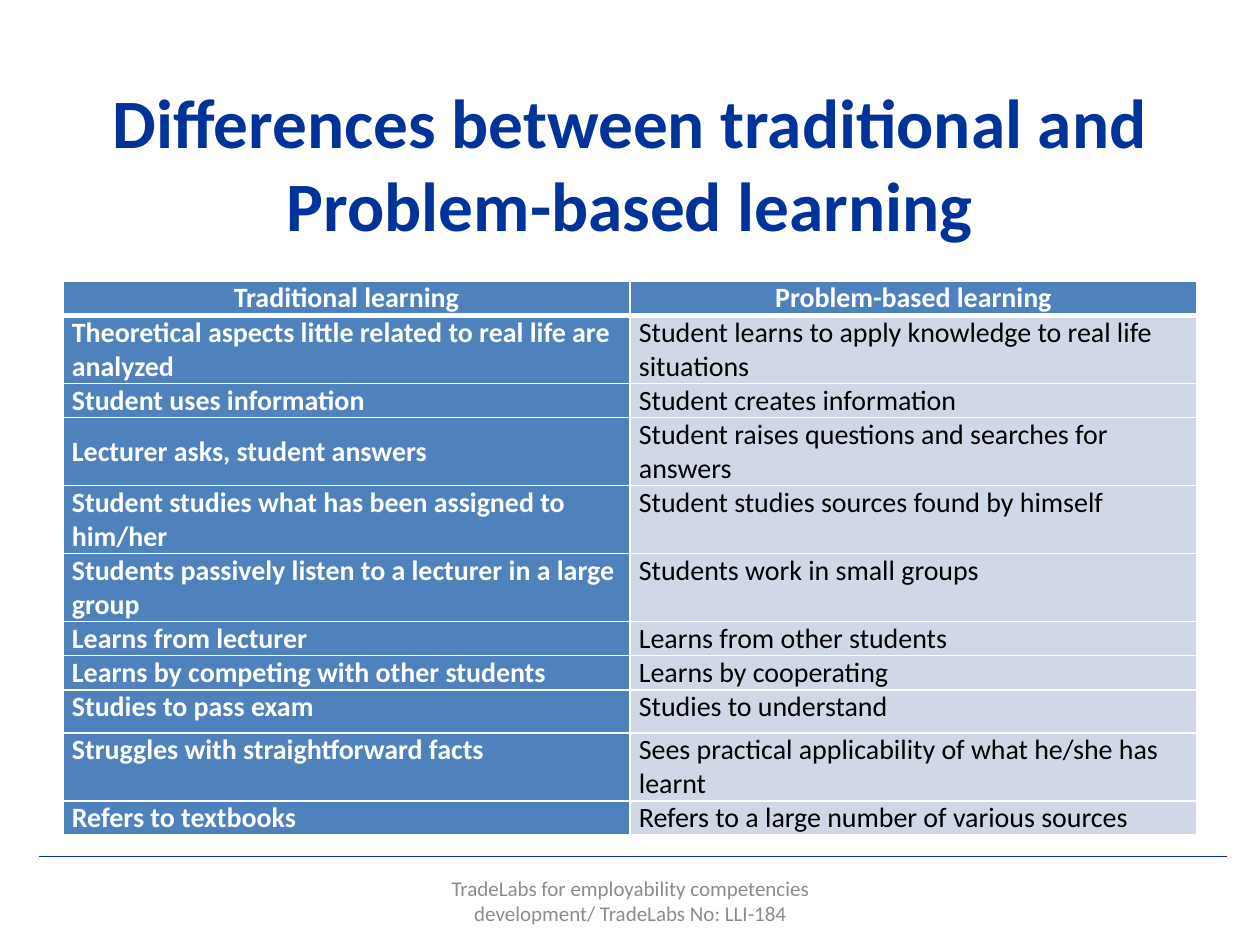
from dataclasses import dataclass

from lxml.etree import SubElement
from pptx import Presentation
from pptx.dml.color import RGBColor
from pptx.enum.shapes import MSO_CONNECTOR
from pptx.enum.text import MSO_ANCHOR, PP_ALIGN
from pptx.oxml.ns import qn
from pptx.util import Cm, Pt


@dataclass(frozen=True)
class Theme:
    font: str = "Calibri"
    navy: str = "003399"
    header: str = "4F81BD"
    body: str = "D0D8E8"
    white: str = "FFFFFF"
    black: str = "000000"
    grey: str = "8C8C8C"
    title_size: float = 39.6
    table_size: float = 16
    footer_size: float = 12


THEME = Theme()
SINGLE, TALL, DOUBLE = 0.69, 0.87, 1.37
TOP, MIDDLE = MSO_ANCHOR.TOP, MSO_ANCHOR.MIDDLE

HEADINGS = ("Traditional learning", "Problem-based learning")
# traditional, problem-based, row height in cm, vertical anchor
COMPARISONS = [
    ("Theoretical aspects little related to real life are analyzed",
     "Student learns to apply knowledge to real life situations", DOUBLE, MIDDLE),
    ("Student uses information", "Student creates information", SINGLE, MIDDLE),
    ("Lecturer asks, student answers",
     "Student raises questions and searches for answers", DOUBLE, MIDDLE),
    ("Student studies what has been assigned to him/her",
     "Student studies sources found by himself", DOUBLE, TOP),
    ("Students passively listen to a lecturer in a large group",
     "Students work in small groups", DOUBLE, TOP),
    ("Learns from lecturer", "Learns from other students", SINGLE, MIDDLE),
    ("Learns by competing with other students", "Learns by cooperating", SINGLE, MIDDLE),
    ("Studies to pass exam", "Studies to understand", TALL, TOP),
    ("Struggles with straightforward facts",
     "Sees practical applicability of what he/she has learnt", DOUBLE, TOP),
    ("Refers to textbooks", "Refers to a large number of various sources", SINGLE, MIDDLE),
]


def write(text_frame, text, size, color, bold=False, align=PP_ALIGN.LEFT):
    text_frame.text = text
    paragraph = text_frame.paragraphs[0]
    paragraph.alignment = align
    for run in paragraph.runs:
        run.font.name = THEME.font
        run.font.size = Pt(size)
        run.font.bold = bold
        run.font.color.rgb = RGBColor.from_string(color)


def add_centred_text(slide, box, text, size, color, bold=False):
    frame = slide.shapes.add_textbox(*map(Cm, box)).text_frame
    frame.word_wrap = True
    frame.vertical_anchor = MIDDLE
    write(frame, text, size, color, bold, PP_ALIGN.CENTER)


def set_borders(cell, **widths):
    """Draw white borders; widths in points are keyed by side: L, R, T, B."""
    properties = cell._tc.get_or_add_tcPr()
    for side, width in widths.items():
        border = SubElement(properties, qn(f"a:ln{side}"), w=str(Pt(width)))
        fill = SubElement(border, qn("a:solidFill"))
        SubElement(fill, qn("a:srgbClr"), val=THEME.white)


def fill_cell(cell, text, fill, color, bold, anchor, align=PP_ALIGN.LEFT, top=1, bottom=1):
    set_borders(cell, L=1, R=1, T=top, B=bottom)
    cell.fill.solid()
    cell.fill.fore_color.rgb = RGBColor.from_string(fill)
    cell.margin_left = cell.margin_right = Cm(0.18)
    cell.margin_top = cell.margin_bottom = 0
    cell.vertical_anchor = anchor
    write(cell.text_frame, text, THEME.table_size, color, bold, align)


def add_comparison_table(slide, box):
    table = slide.shapes.add_table(len(COMPARISONS) + 1, 2, *map(Cm, box)).table
    table.horz_banding = False
    for column in table.columns:
        column.width = Cm(box[2] / 2)
    table.rows[0].height = Cm(SINGLE)
    for column, heading in enumerate(HEADINGS):
        fill_cell(table.cell(0, column), heading, THEME.header, THEME.white, True,
                  TOP, PP_ALIGN.CENTER, bottom=3)
    for row, (traditional, problem_based, height, anchor) in enumerate(COMPARISONS, 1):
        table.rows[row].height = Cm(height)
        top = 3 if row == 1 else 1
        fill_cell(table.cell(row, 0), traditional, THEME.header, THEME.white, True,
                  anchor, top=top)
        fill_cell(table.cell(row, 1), problem_based, THEME.body, THEME.black, False,
                  anchor, top=top)


def add_footer(slide, box):
    """Place a rule along the top of the box and the project name below it."""
    left, top, width, _ = box
    rule = slide.shapes.add_connector(
        MSO_CONNECTOR.STRAIGHT, Cm(left), Cm(top), Cm(left + width), Cm(top))
    rule.line.color.rgb = RGBColor.from_string(THEME.navy)
    rule.line.width = Pt(0.75)
    SubElement(rule._element.spPr, qn("a:effectLst"))
    add_centred_text(
        slide, (left + 7.9, top + 0.38, 8.04, 1.02),
        "TradeLabs for employability competencies development/ TradeLabs No: LLI-184",
        THEME.footer_size, THEME.grey)


def main():
    presentation = Presentation()
    presentation.slide_width, presentation.slide_height = Cm(25.4), Cm(19.05)
    slide = presentation.slides.add_slide(presentation.slide_layouts[6])
    add_centred_text(slide, (1.27, 1.69, 22.86, 3.18),
                     "Differences between traditional and Problem-based learning",
                     THEME.title_size, THEME.navy, bold=True)
    add_comparison_table(slide, (1.27, 5.67, 22.86, 11.02))
    add_footer(slide, (0.79, 17.27, 23.95, 1.4))
    presentation.save("out.pptx")


if __name__ == "__main__":
    main()
